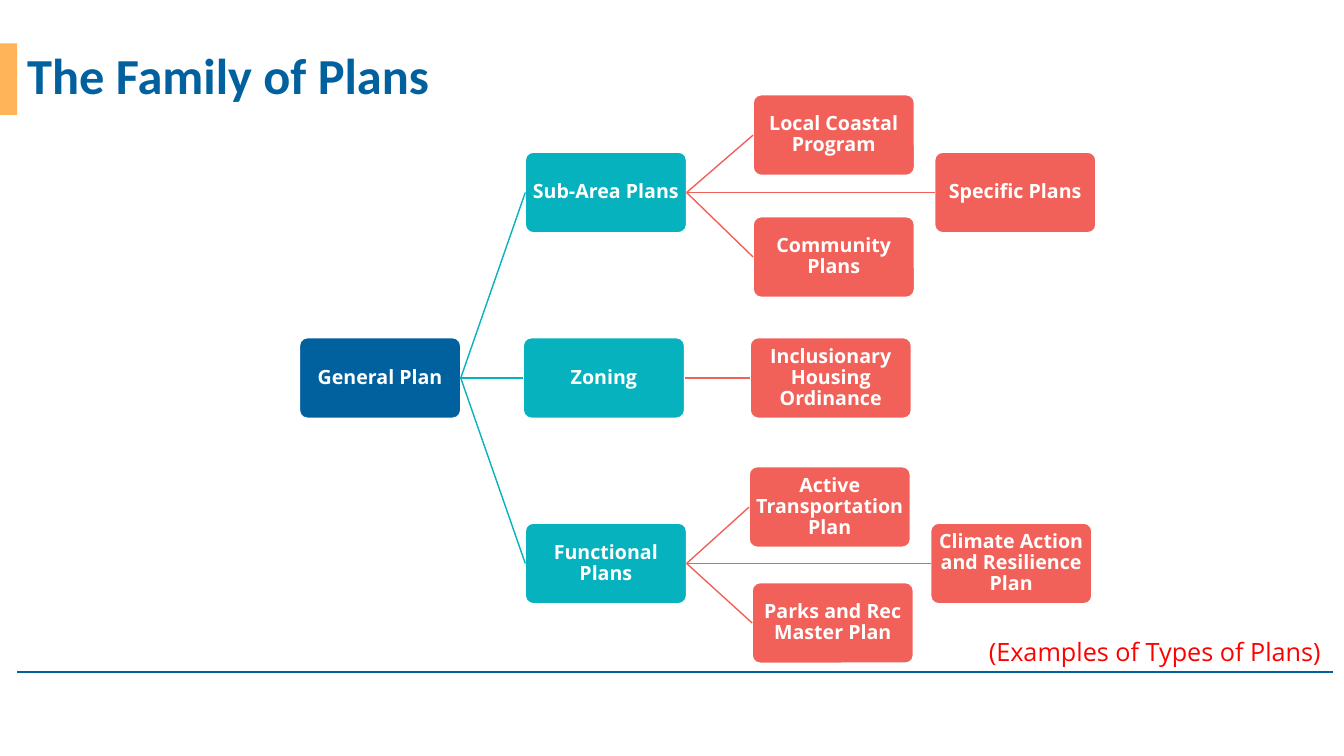
import pptx
import pptx.util
import pptx.dml.color
import pptx.enum.shapes
import pptx.enum.text
import pptx.oxml.ns
import lxml.etree

Inches = pptx.util.Inches
Pt = pptx.util.Pt
RGBColor = pptx.dml.color.RGBColor
MSO_SHAPE = pptx.enum.shapes.MSO_SHAPE
MSO_ANCHOR = pptx.enum.text.MSO_ANCHOR
PP_ALIGN = pptx.enum.text.PP_ALIGN

BLUE = RGBColor(0x00, 0x61, 0x9E)
TEAL = RGBColor(0x05, 0xB2, 0xBD)
CORAL = RGBColor(0xF2, 0x61, 0x59)
ORANGE = RGBColor(0xFF, 0xB4, 0x5A)
RED = RGBColor(0xFF, 0x00, 0x00)
WHITE = RGBColor(0xFF, 0xFF, 0xFF)

PLAN_WIDTH, PLAN_HEIGHT = 1.6, 0.8

PLANS = [
    ("General Plan", None, 2.97, 3.35, BLUE),
    ("Sub-Area Plans", "General Plan", 5.21, 1.51, TEAL),
    ("Local Coastal Program", "Sub-Area Plans", 7.47, 0.94, CORAL),
    ("Specific Plans", "Sub-Area Plans", 9.27, 1.51, CORAL),
    ("Community Plans", "Sub-Area Plans", 7.47, 2.15, CORAL),
    ("Zoning", "General Plan", 5.19, 3.35, TEAL),
    ("Inclusionary Housing Ordinance", "Zoning", 7.44, 3.35, CORAL),
    ("Functional Plans", "General Plan", 5.21, 5.19, TEAL),
    ("Active Transportation Plan", "Functional Plans", 7.43, 4.63, CORAL),
    ("Climate Action and Resilience Plan", "Functional Plans", 9.23, 5.19, CORAL),
    ("Parks and Rec Master Plan", "Functional Plans", 7.46, 5.78, CORAL),
]

prs = pptx.Presentation()
prs.slide_width = Inches(13.33)
prs.slide_height = Inches(7.5)
slide = prs.slides.add_slide(prs.slide_layouts[5])
shapes = slide.shapes


def add_line(x1, y1, x2, y2, color, width):
    line = shapes.add_connector(
        pptx.enum.shapes.MSO_CONNECTOR.STRAIGHT,
        Inches(x1), Inches(y1), Inches(x2), Inches(y2))
    line.line.color.rgb = color
    line.line.width = Pt(width)
    lxml.etree.SubElement(line._element.spPr, pptx.oxml.ns.qn("a:effectLst"))
    return line


add_line(0.17, 6.67, 13.22, 6.67, BLUE, 1.5)

accent = shapes.add_shape(MSO_SHAPE.RECTANGLE, 0, Inches(0.43), Inches(0.17), Inches(0.71))
accent.shadow.inherit = False
accent.fill.solid()
accent.fill.fore_color.rgb = ORANGE
accent.line.fill.background()

title = shapes.title
title.left, title.top = Inches(0.17), Inches(0.52)
title.width, title.height = Inches(11.5), Inches(0.52)
title.text_frame.text = "The Family of Plans"
title.text_frame.auto_size = pptx.enum.text.MSO_AUTO_SIZE.NONE
title.text_frame.vertical_anchor = MSO_ANCHOR.MIDDLE
heading = title.text_frame.paragraphs[0]
heading.alignment = PP_ALIGN.LEFT
heading.line_spacing = 0.9
heading.font.name = "Calibri"
heading.font.size = Pt(36)
heading.font.bold = True
heading.font.color.rgb = BLUE

plan_boxes = {}
for name, parent, left, top, color in PLANS:
    plan = shapes.add_shape(
        MSO_SHAPE.ROUNDED_RECTANGLE,
        Inches(left), Inches(top), Inches(PLAN_WIDTH), Inches(PLAN_HEIGHT))
    plan.adjustments[0] = 0.1
    plan.shadow.inherit = False
    plan.fill.solid()
    plan.fill.fore_color.rgb = color
    plan.line.color.rgb = WHITE
    plan.line.width = Pt(1)
    frame = plan.text_frame
    frame.word_wrap = True
    frame.vertical_anchor = MSO_ANCHOR.MIDDLE
    frame.margin_left = frame.margin_right = Inches(0.03)
    frame.margin_top = frame.margin_bottom = Inches(0.03)
    frame.text = name
    label = frame.paragraphs[0]
    label.alignment = PP_ALIGN.CENTER
    label.line_spacing = 0.9
    label.font.name = "Open Sans"
    label.font.size = Pt(14)
    label.font.bold = True
    label.font.color.rgb = WHITE
    plan_boxes[name] = plan
    if parent:
        branch = add_line(0, 0, 1, 1, color, 1)
        branch.begin_connect(plan_boxes[parent], 3)
        branch.end_connect(plan, 1)

caption = shapes.add_textbox(Inches(9.71), Inches(6.26), Inches(3.53), Inches(0.4))
caption.text_frame.word_wrap = False
caption.text_frame.text = "(Examples of Types of Plans)"
examples = caption.text_frame.paragraphs[0]
examples.font.name = "Open Sans"
examples.font.size = Pt(18)
examples.font.color.rgb = RED

prs.save("out.pptx")
